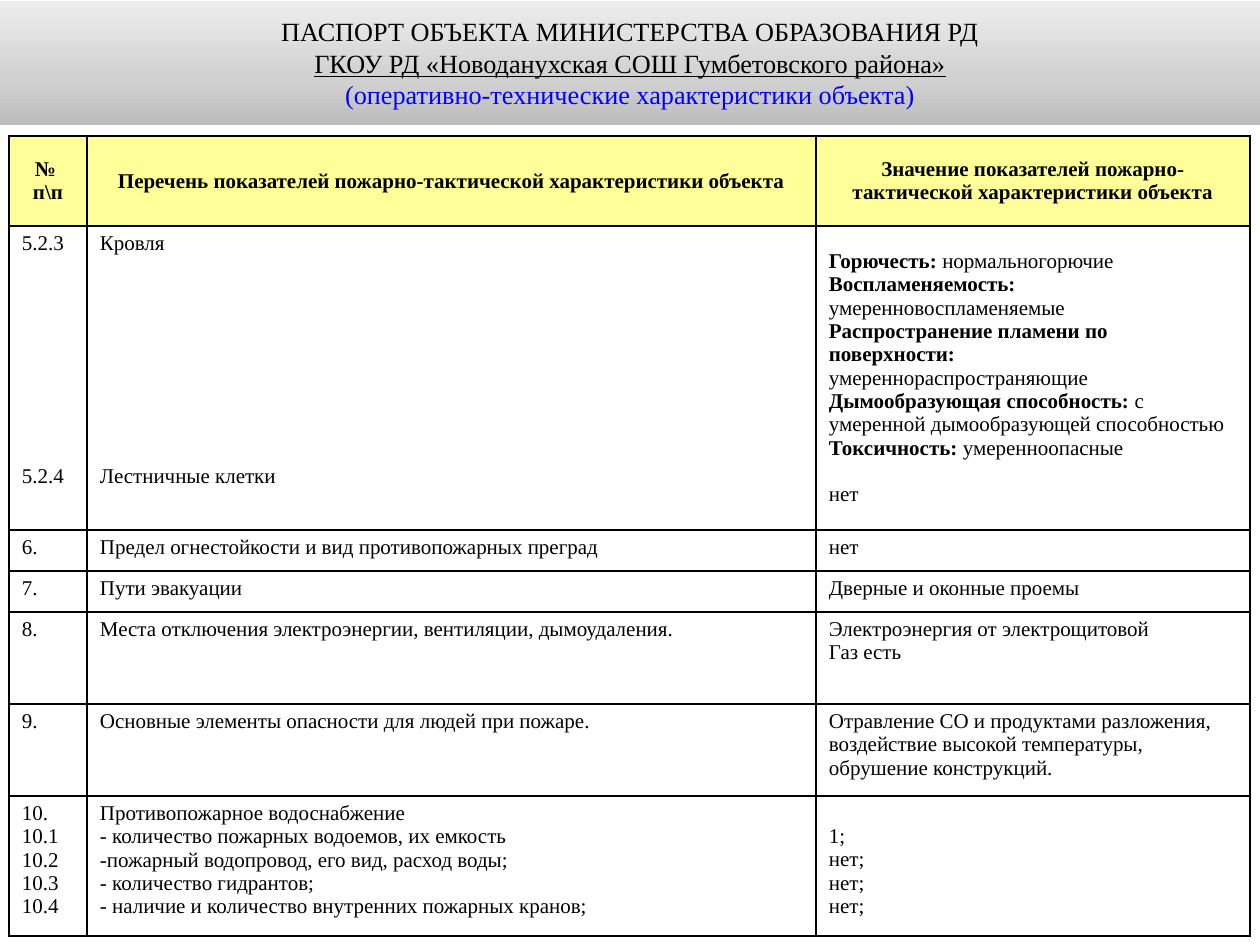
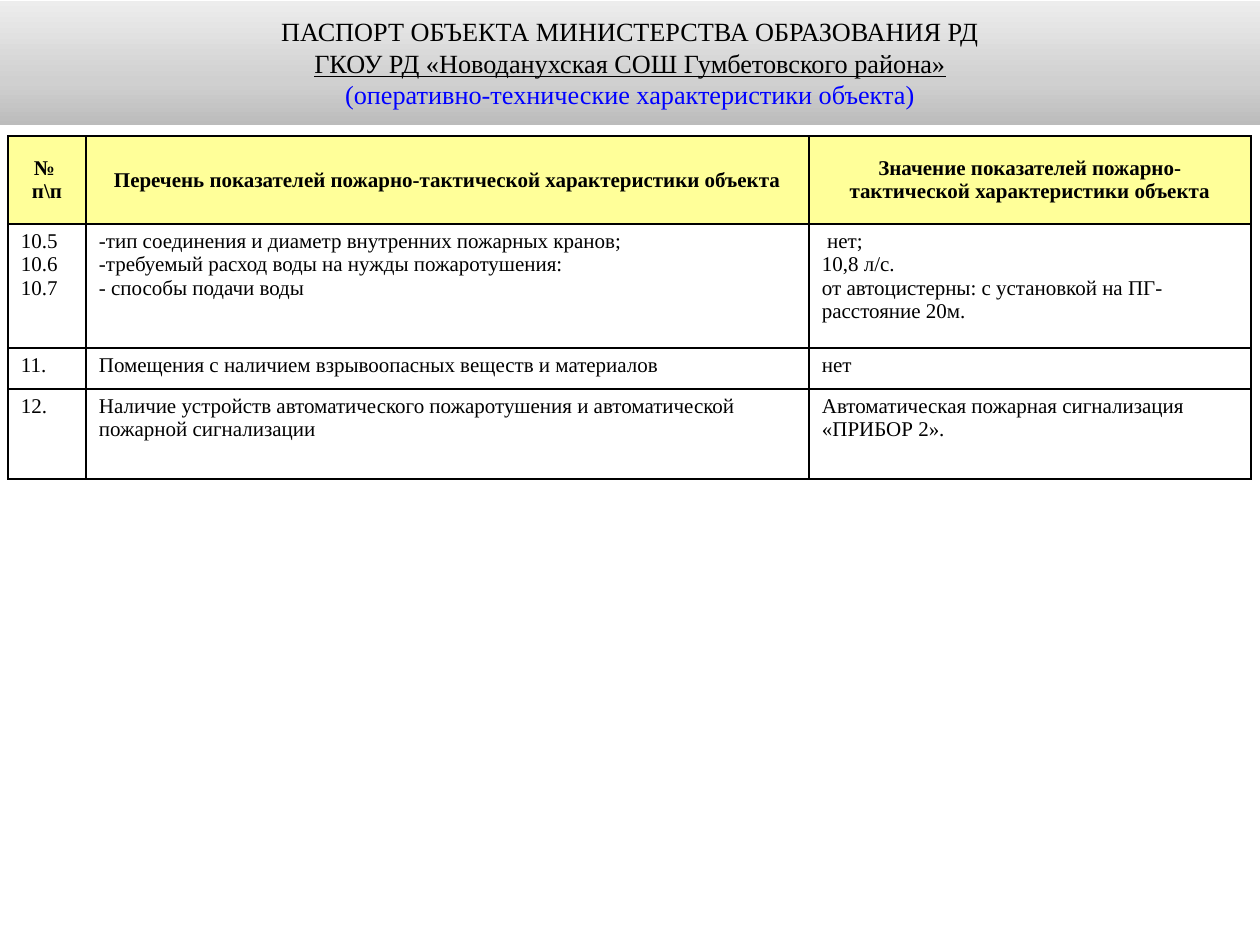
from collections import namedtuple
from copy import deepcopy

from lxml import etree
from pptx import Presentation
from pptx import util as u
from pptx.dml import color
from pptx.enum import text
from pptx.oxml import ns

PX = 914400 / 126  # EMU in one px
FONT = "Times New Roman"
COLORS = {
    "text": "000000",
    "note": "0000FF",
    "header": "FFFF99",
    "cell": "FFFFFF",
    "border": "000000",
}
BAND_STOPS = [(0, "BCBCBC"), (0.35, "D0D0D0"), (1, "EDEDED")]
BAND_BOX = (0, 1, 1260, 124)
LINE = 13.3  # height of one line of table text, points
PAD_X, PAD_Y = 13, 6

# One paragraph of a cell: a bold label, plain text, a dash bullet, space before
Line = namedtuple("Line", "plain bold bullet before", defaults=("", False, 0))
# A body cell that needs its own anchor or top margin
Cell = namedtuple("Cell", "lines middle top", defaults=(False, PAD_Y))

HEADER = [
    ["№ ", "п\\п"],
    ["Перечень показателей пожарно-тактической характеристики объекта"],
    ["Значение показателей пожарно-тактической характеристики объекта"],
]

ROOF_VALUES = [
    Line("нормальногорючие", "Горючесть: "),
    Line("умеренновоспламеняемые", "Воспламеняемость: "),
    Line("", "Распространение пламени по поверхности:"),
    "умереннораспространяющие",
    Line("с умеренной дымообразующей способностью", "Дымообразующая способность: "),
    Line("умеренноопасные", "Токсичность: "),
    Line("нет", before=LINE),
]

BUILDING_ROWS = [
    [["5.2.3", Line("5.2.4", before=9 * LINE)],
     ["Кровля", Line("Лестничные клетки", before=9 * LINE)],
     Cell(ROOF_VALUES, middle=True)],
    [["6."], ["Предел огнестойкости и вид противопожарных преград"], ["нет"]],
    [["7."], ["Пути эвакуации"], ["Дверные и оконные проемы"]],
    [["8."], ["Места отключения электроэнергии, вентиляции, дымоудаления."],
     ["Электроэнергия от электрощитовой", "Газ есть"]],
    [["9."], ["Основные элементы опасности для людей при пожаре."],
     ["Отравление СО и продуктами разложения, воздействие высокой температуры, "
      "обрушение конструкций."]],
    [["10.", "10.1", "10.2", "10.3", "10.4"],
     ["Противопожарное водоснабжение",
      Line(" количество пожарных водоемов, их емкость", bullet=True),
      Line("пожарный водопровод, его вид, расход воды;", bullet=True),
      Line(" количество гидрантов;", bullet=True),
      Line(" наличие и количество внутренних пожарных кранов;", bullet=True)],
     Cell(["1;", "нет;", "нет;", "нет;"], top=PAD_Y + 23)],
]

WATER_ROWS = [
    [["10.5", "10.6", "10.7"],
     ["-тип соединения и диаметр внутренних пожарных кранов;",
      Line("требуемый расход воды на нужды пожаротушения:", bullet=True),
      Line(" способы подачи воды", bullet=True)],
     [" нет;", "10,8 л/с.", "от автоцистерны: с установкой на ПГ- расстояние 20м."]],
    [["11."], ["Помещения с наличием взрывоопасных веществ и материалов"], ["нет"]],
    [["12."],
     ["Наличие устройств автоматического пожаротушения и автоматической "
      "пожарной сигнализации"],
     ["Автоматическая пожарная сигнализация", "«ПРИБОР 2»."]],
]


def emu(px):
    return u.Emu(round(px * PX))


def rgb(name):
    return color.RGBColor.from_string(COLORS[name])


def add_run(paragraph, words, size, bold=False, underline=False, ink="text"):
    run = paragraph.add_run()
    run.text = words
    font = run.font
    font.name, font.size, font.bold, font.underline = FONT, u.Pt(size), bold, underline
    font.color.rgb = rgb(ink)


def next_paragraph(frame, index):
    return frame.add_paragraph() if index else frame.paragraphs[0]


# Title band shared by all slides
def fill_band(band):
    band.fill.gradient()
    band.fill.gradient_angle = 90
    stop_list = band.element.find(".//" + ns.qn("a:gsLst"))
    stop_list.append(deepcopy(stop_list[0]))
    for stop, (position, value) in zip(band.fill.gradient_stops, BAND_STOPS):
        stop.position = position
        stop.color.rgb = color.RGBColor.from_string(value)


def place_title(slide, box):
    title = slide.shapes.title
    title.left, title.top, title.width, title.height = map(emu, box)
    fill_band(title)
    frame = title.text_frame
    frame.auto_size = text.MSO_AUTO_SIZE.NONE
    frame.word_wrap = True
    frame.vertical_anchor = text.MSO_ANCHOR.MIDDLE
    lines = [
        ("ПАСПОРТ ОБЪЕКТА МИНИСТЕРСТВА ОБРАЗОВАНИЯ РД", {}),
        ("ГКОУ РД «Новоданухская СОШ Гумбетовского района»", {"underline": True}),
        ("(оперативно-технические характеристики объекта)", {"ink": "note"}),
    ]
    for index, (words, style) in enumerate(lines):
        paragraph = next_paragraph(frame, index)
        paragraph.alignment = text.PP_ALIGN.CENTER
        add_run(paragraph, words, 15, **style)


# Table cells
def set_borders(cell):
    properties = cell._tc.get_or_add_tcPr()
    for side in ("a:lnL", "a:lnR", "a:lnT", "a:lnB"):
        line = etree.SubElement(properties, ns.qn(side), w=str(u.Pt(1)))
        fill = etree.SubElement(line, ns.qn("a:solidFill"))
        etree.SubElement(fill, ns.qn("a:srgbClr"), val=COLORS["border"])


def add_dash(paragraph):
    properties = paragraph._p.get_or_add_pPr()
    properties.set("marL", "0")
    properties.set("indent", "0")
    etree.SubElement(properties, ns.qn("a:buFont"), typeface=FONT)
    etree.SubElement(properties, ns.qn("a:buChar"), char="-")


def fill_cell(cell, content, header=False):
    set_borders(cell)
    cell.fill.solid()
    cell.fill.fore_color.rgb = rgb("header" if header else "cell")
    if not isinstance(content, Cell):
        content = Cell(content, middle=header)
    cell.margin_left = cell.margin_right = emu(PAD_X)
    cell.margin_top, cell.margin_bottom = emu(content.top), emu(PAD_Y)
    anchor = text.MSO_ANCHOR
    cell.vertical_anchor = anchor.MIDDLE if content.middle else anchor.TOP
    for index, line in enumerate(content.lines):
        if isinstance(line, str):
            line = Line("", line) if header else Line(line)
        paragraph = next_paragraph(cell.text_frame, index)
        paragraph.alignment = text.PP_ALIGN.CENTER if header else text.PP_ALIGN.LEFT
        if line.before:
            paragraph.space_before = u.Pt(line.before)
        if line.bullet:
            add_dash(paragraph)
        if line.bold:
            add_run(paragraph, line.bold, 12, bold=True)
        if line.plain:
            add_run(paragraph, line.plain, 12)


def place_table(slide, corner, widths, heights, rows):
    box = (*corner, sum(widths), sum(heights))
    frame = slide.shapes.add_table(len(heights), len(widths), *map(emu, box))
    table = frame.table
    table.first_row = table.horz_banding = False
    for column, width in zip(table.columns, widths):
        column.width = emu(width)
    for row, height in zip(table.rows, heights):
        row.height = emu(height)
    for row_index, row in enumerate([HEADER] + rows):
        for column_index, content in enumerate(row):
            fill_cell(table.cell(row_index, column_index), content, row_index == 0)


def add_passport_slide(presentation, corner, widths, heights, rows):
    slide = presentation.slides.add_slide(presentation.slide_layouts[5])
    place_title(slide, BAND_BOX)
    place_table(slide, corner, widths, heights, rows)


def main():
    presentation = Presentation()
    presentation.slide_width, presentation.slide_height = emu(1260), emu(945)
    add_passport_slide(presentation, (9, 136), [78, 729, 434],
                       [90, 304, 41, 41, 92, 92, 140], BUILDING_ROWS)
    add_passport_slide(presentation, (8, 136), [78, 723, 442],
                       [88, 124, 41, 90], WATER_ROWS)
    presentation.save("out.pptx")


if __name__ == "__main__":
    main()
